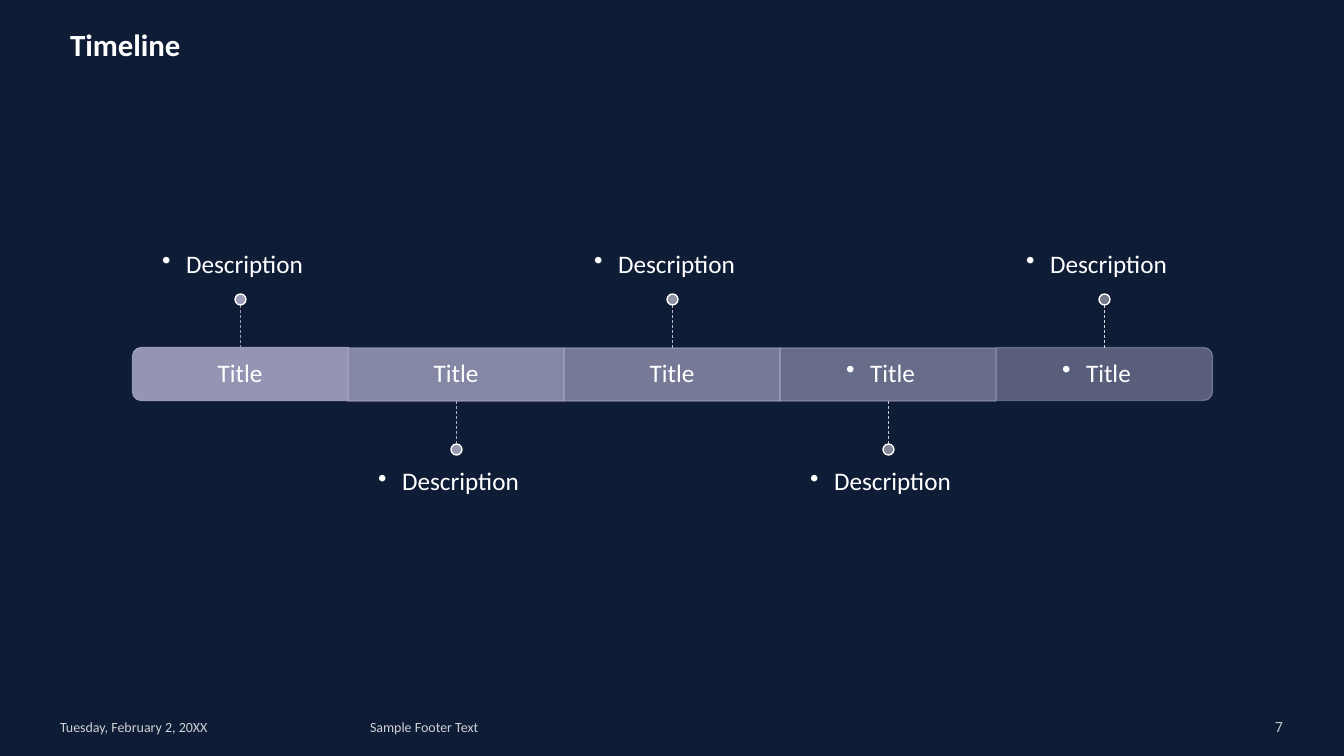
from lxml.etree import SubElement as Sub
from pptx import Presentation
from pptx.dml.color import RGBColor as RGB
from pptx.enum.dml import MSO_LINE as Dash
from pptx.enum.shapes import MSO_CONNECTOR as Conn, MSO_SHAPE as Shape
from pptx.enum.text import MSO_ANCHOR as Anchor, MSO_AUTO_SIZE as Auto, PP_ALIGN as Align
from pptx.oxml.ns import qn
from pptx.util import Pt

PX = 914400 * 10 // 1008
HUES = {"back": "0F1C35", "text": "FFFFFF", "bar": "A3A3C1"}
HUES = {name: RGB.from_string(code) for name, code in HUES.items()}

deck = Presentation()
deck.slide_width, deck.slide_height = 1344 * PX, 756 * PX
slide = deck.slides.add_slide(deck.slide_layouts[5])
slide.background.fill.solid()
slide.background.fill.fore_color.rgb = HUES["back"]
shapes = slide.shapes


def fade(shape, share):
    """Make every colour set so far on the shape partly clear."""
    for tone in shape._element.iter(qn("a:srgbClr")):
        Sub(tone, qn("a:alpha"), val=str(share * 1000))


def write(place, text, size, align, anchor, pads=(0, 0, 0, 0), dot=False, font="Calibri"):
    """Add a text box, with a bullet if dot is set."""
    box = shapes.add_textbox(*(n * PX for n in place))
    frame = box.text_frame
    frame.word_wrap = True
    frame.vertical_anchor = anchor
    (frame.margin_left, frame.margin_top,
     frame.margin_right, frame.margin_bottom) = (n * PX for n in pads)
    frame.text = text
    para = frame.paragraphs[0]
    if dot:
        Sub(para._p.get_or_add_pPr(), qn("a:buChar"), char="•")
    para.alignment = align
    run = para.runs[0].font
    run.name, run.size = font, Pt(size)
    run.color.rgb = HUES["text"]
    return box


# Title
title = shapes.title
title.left, title.top, title.width, title.height = 60 * PX, 21 * PX, 150 * PX, 47 * PX
frame = title.text_frame
frame.text = "Timeline"
frame.word_wrap = False
frame.auto_size = Auto.SHAPE_TO_FIT_TEXT
frame.vertical_anchor = Anchor.TOP
frame.paragraphs[0].alignment = Align.LEFT
font = frame.paragraphs[0].runs[0].font
font.name, font.size, font.bold = "Calibri", Pt(22), True
font.color.rgb = HUES["text"]

# Footer row
for left, wide, text, align, face in (
        (60, 290, "Tuesday, February 2, 20XX", Align.LEFT, "Calibri"),
        (370, 704, "Sample Footer Text", Align.LEFT, "Calibri"),
        (1097, 186, "7", Align.RIGHT, "Roboto")):
    fade(write((left, 718, wide, 17), text, 10, align, Anchor.MIDDLE, font=face), 80)

# Timeline: bar parts with notes above and below in turn
LEFT, TOP, WIDE, HIGH = 132, 348, 216, 53
STEM, DOT = 43, 11
NOTE_W, NOTE_H = 360, 185
steps = (  # bar alpha, title bullet, stem hue, dot alpha
    (90, False, "9C9CB8", 100),
    (80, False, "ABABC3", 88),
    (70, False, "BABACE", 75),
    (60, True, "C9C9D8", 62),
    (50, True, "D8D8E3", 50),
)
for i, (clear, dot, hue, dim) in enumerate(steps):
    left = LEFT + i * WIDE
    mid = left + WIDE // 2
    tone = RGB.from_string(hue)

    # Bar part: the end parts are turned so their round side faces out
    turn = {0: 270, len(steps) - 1: 90}.get(i, 0)
    if turn:
        kind = Shape.ROUND_2_SAME_RECTANGLE
        place = (mid - HIGH // 2, TOP + (HIGH - WIDE) // 2, HIGH, WIDE)
    else:
        kind, place = Shape.RECTANGLE, (left, TOP, WIDE, HIGH)
    part = shapes.add_shape(kind, *(n * PX for n in place))
    part.rotation = turn
    part.shadow.inherit = False
    part.fill.solid()
    part.fill.fore_color.rgb = part.line.color.rgb = HUES["bar"]
    part.line.width = Pt(1)
    fade(part, clear)
    label = write((left, TOP, WIDE, HIGH), "Title", 18, Align.CENTER,
                  Anchor.MIDDLE, (15, 15, 15, 15), dot)

    # Note, stem and dot
    if i % 2 == 0:
        start, end = TOP - STEM, TOP
        spot = start - DOT
        top, anchor, pads = spot - NOTE_H, Anchor.BOTTOM, (0, 0, 0, 15)
    else:
        start, end = TOP + HIGH, TOP + HIGH + STEM
        spot = end
        top, anchor, pads = spot + DOT - 1, Anchor.TOP, (0, 15, 0, 0)
    note = write((mid - NOTE_W // 2, top, NOTE_W, NOTE_H), "Description", 18,
                 Align.CENTER, anchor, pads, True)
    for box in (label, note):
        box.text_frame.paragraphs[0].line_spacing = 0.9

    stem = shapes.add_connector(Conn.STRAIGHT, mid * PX, start * PX, mid * PX, end * PX)
    stem.line.color.rgb = tone
    stem.line.width = Pt(0.5)
    stem.line.dash_style = Dash.DASH
    Sub(stem._element.spPr, qn("a:effectLst"))

    knob = shapes.add_shape(Shape.OVAL, (mid - DOT // 2) * PX, spot * PX, DOT * PX, DOT * PX)
    knob.shadow.inherit = False
    knob.fill.solid()
    knob.fill.fore_color.rgb = tone
    fade(knob, dim)
    knob.line.color.rgb = HUES["text"]
    knob.line.width = Pt(1)

deck.save("out.pptx")
